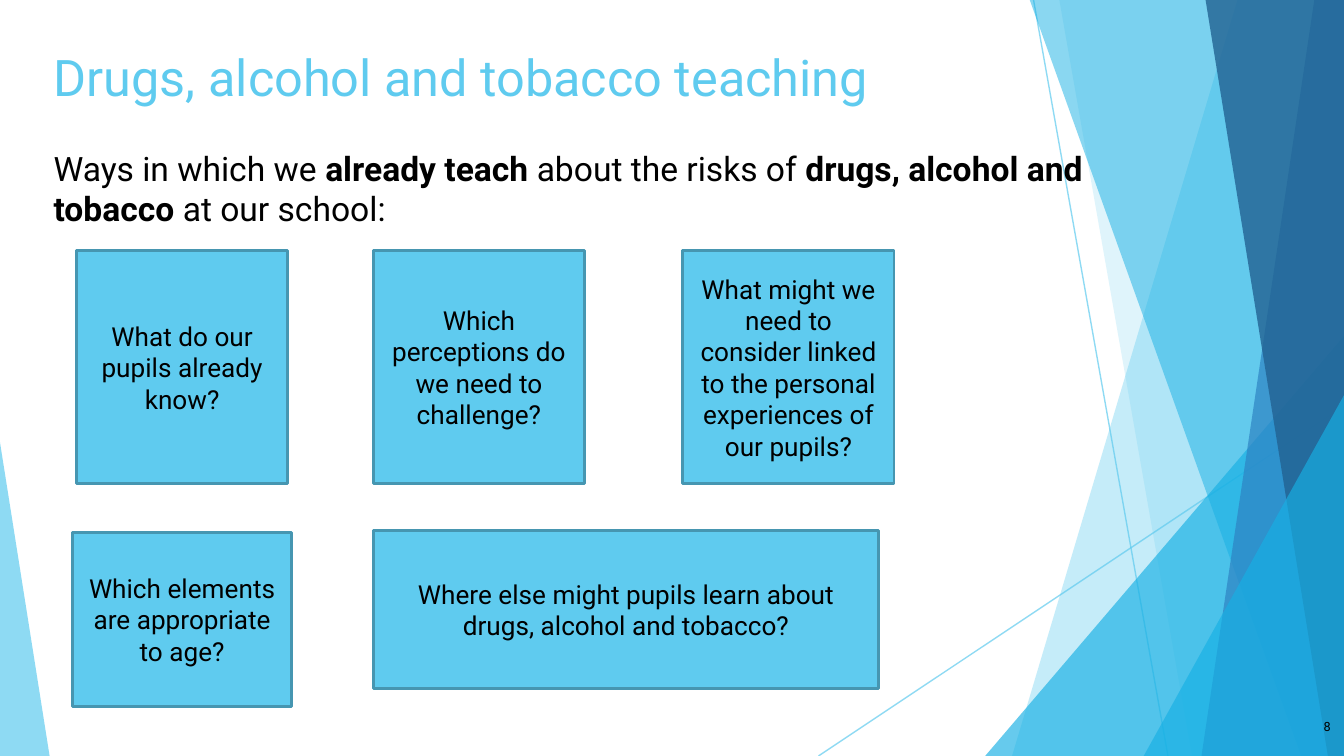
from pptx import Presentation
from pptx.dml.color import RGBColor
from pptx.enum.shapes import MSO_CONNECTOR, MSO_SHAPE
from pptx.enum.text import MSO_ANCHOR as ANCHOR, MSO_AUTO_SIZE, PP_ALIGN as ALIGN
from pptx.oxml.ns import qn
from pptx.util import Pt
from lxml.etree import SubElement

W, H = 720, 405
COLORS = {
    "sky": "5FCBEF", "cyan": "17B0E4", "blue": "2E83C3",
    "navy": "226292", "edge": "4696B1", "text": "000000",
}


class Deck:
    font = "Roboto"

    def __init__(self):
        self.prs = Presentation()
        self.prs.slide_width, self.prs.slide_height = Pt(W), Pt(H)
        self.slide = self.prs.slides.add_slide(self.prs.slide_layouts[5])
        self.shapes = self.slide.shapes

    def paint(self, fill, color, alpha=100):
        fill.solid()
        fill.fore_color.rgb = RGBColor.from_string(COLORS[color])
        if alpha < 100:
            clr = fill._xPr.find(qn("a:solidFill"))[0]
            SubElement(clr, qn("a:alpha"), val=str(alpha * 1000))

    def line(self, x1, y1, x2, y2):
        s = self.shapes.add_connector(
            MSO_CONNECTOR.STRAIGHT, Pt(x1), Pt(y1), Pt(x2), Pt(y2))
        s.line.width = Pt(0.75)
        self.paint(s.line.fill, "sky", 70)
        SubElement(s._element.spPr, qn("a:effectLst"))

    def plain(self, s, color, alpha):
        s.shadow.inherit = False
        s.line.fill.background()
        self.paint(s.fill, color, alpha)

    def band(self, top_x, bottom_x, color, alpha):
        """Slanted left edge, reaching to the right side of the slide."""
        fb = self.shapes.build_freeform(Pt(top_x), Pt(-0.5))
        fb.add_line_segments(
            [(Pt(W), Pt(-0.5)), (Pt(W), Pt(H)), (Pt(bottom_x), Pt(H))])
        self.plain(fb.convert_to_shape(), color, alpha)

    def triangle(self, x, y, w, apex, color, alpha):
        """Triangle standing on the bottom of the slide."""
        s = self.shapes.add_shape(
            MSO_SHAPE.ISOSCELES_TRIANGLE, Pt(x), Pt(y), Pt(w), Pt(H - y))
        s.adjustments[0] = apex
        self.plain(s, color, alpha)

    def set_text(self, tf, runs, size, color="text", align=ALIGN.LEFT,
                 anchor=ANCHOR.TOP, inset=7.2):
        tf.word_wrap, tf.auto_size = True, MSO_AUTO_SIZE.NONE
        tf.vertical_anchor = anchor
        tf.margin_left = tf.margin_right = Pt(7.2)
        tf.margin_top = tf.margin_bottom = Pt(inset)
        p = tf.paragraphs[0]
        p.alignment = align
        p.font.name, p.font.size = self.font, Pt(size)
        p.font.color.rgb = RGBColor.from_string(COLORS[color])
        for text, bold in runs:
            r = p.add_run()
            r.text = text
            if bold:
                r.font.bold = True

    def title(self, text, x, y, w, h):
        s = self.shapes.title
        s.left, s.top, s.width, s.height = Pt(x), Pt(y), Pt(w), Pt(h)
        self.set_text(s.text_frame, [(text, False)], 27, "sky")
        self.shapes._spTree.append(s._element)  # in front of the backdrop

    def text(self, runs, x, y, w, h, size, **style):
        s = self.shapes.add_textbox(Pt(x), Pt(y), Pt(w), Pt(h))
        self.set_text(s.text_frame, runs, size, **style)

    def box(self, text, x, y, w, h):
        s = self.shapes.add_shape(MSO_SHAPE.RECTANGLE, Pt(x), Pt(y), Pt(w), Pt(h))
        s.shadow.inherit = False
        self.paint(s.fill, "sky")
        self.paint(s.line.fill, "edge")
        s.line.width = Pt(1.5)
        self.set_text(s.text_frame, [(text, False)], 14, align=ALIGN.CENTER,
                      anchor=ANCHOR.MIDDLE, inset=3.6)


def main():
    deck = Deck()

    # Backdrop of translucent facets
    deck.line(553.7, 0, 625.7, H)
    deck.line(W, 217.4, 438.5, H)
    deck.band(663.1, 542.2, "sky", 36)
    deck.band(567.4, 638.6, "sky", 20)
    deck.triangle(527.8, 180, 192.2, 1, "cyan", 66)
    deck.band(551.5, 697, "cyan", 50)
    deck.band(704.2, 643.7, "blue", 70)
    deck.band(645.8, 711.4, "navy", 80)
    deck.triangle(612.7, 211.7, 107.3, 1, "cyan", 66)
    deck.triangle(0, 236.9, 26.6, 0, "sky", 70)

    # Title, introduction and page number
    deck.title("Drugs, alcohol and tobacco teaching", 21.6, 17.3, 689, 45.4)
    deck.text([("Ways in which we ", False), ("already teach ", True),
               ("about the risks of ", False),
               ("drugs, alcohol and tobacco ", True),
               ("at our school:", False)], 21.6, 72, 566, 296.6, 18)
    deck.text([("8", False)], 676.8, 373.7, 43.2, 31, 6.8,
              align=ALIGN.RIGHT, anchor=ANCHOR.MIDDLE)

    # Question boxes: three in the upper row, two below
    upper = [
        (41, "What do our pupils already know?"),
        (200, "Which perceptions do we need to challenge?"),
        (365.8, "What might we need to consider linked to the personal "
                "experiences of our pupils?"),
    ]
    for x, question in upper:
        deck.box(question, x, 134.3, 113.2, 124.8)
    deck.box("Which elements are appropriate to age?", 38.9, 285.1, 117.4, 93.6)
    deck.box("Where else might pupils learn about drugs, alcohol and tobacco?",
             200, 284.2, 270.8, 84.8)

    deck.prs.save("out.pptx")


if __name__ == "__main__":
    main()
